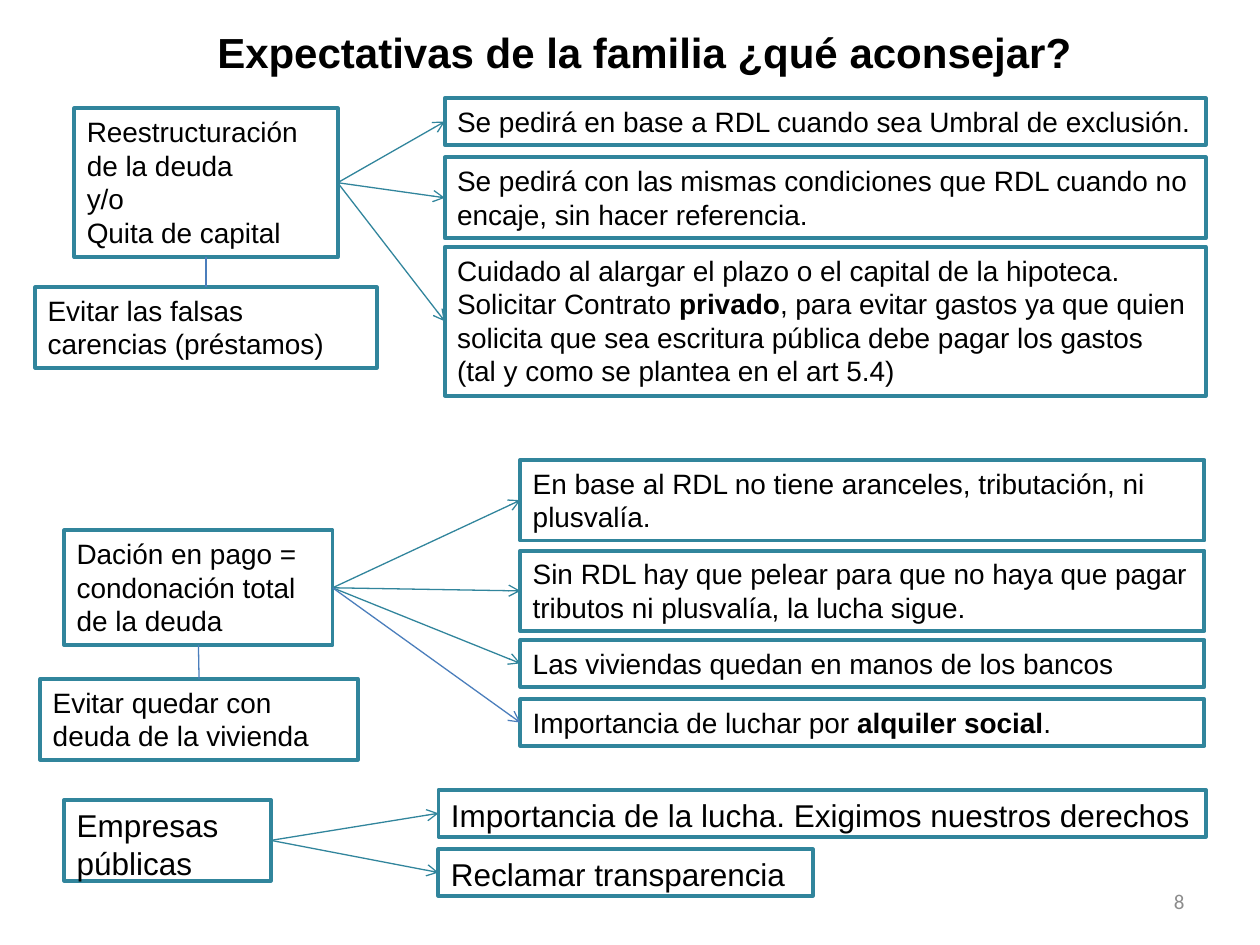
from lxml import etree
from pptx import Presentation
from pptx.dml.color import RGBColor
from pptx.enum.shapes import MSO_CONNECTOR as LINE, MSO_SHAPE as SHAPE
from pptx.enum.text import MSO_ANCHOR as ANCHOR, PP_ALIGN as ALIGN
from pptx.oxml.ns import qn
from pptx.util import Inches, Pt

COLORS = {"text": "000000", "teal": "31859C", "blue": "4B7EBC", "number": "8C8C8C"}
RIGHT, LEFT, BOTTOM, TOP = 3, 1, 2, 0

deck = Presentation()
deck.slide_width, deck.slide_height = Inches(10), Inches(7.5)
slide = deck.slides.add_slide(deck.slide_layouts[6])


def write(text, at, size=16, font="Arial", color="text", bold=False,
          align=ALIGN.LEFT, anchor=ANCHOR.TOP, boxed=True):
    """Add text; \\n parts paragraphs, \\v breaks a line, ** switches bold."""
    place = [Inches(length) for length in at]
    if boxed:
        holder = slide.shapes.add_shape(SHAPE.RECTANGLE, *place)
        holder.shadow.inherit = False
        holder.fill.background()
        holder.line.color.rgb = RGBColor.from_string(COLORS["teal"])
        holder.line.width = Pt(2.25)
    else:
        holder = slide.shapes.add_textbox(*place)
    frame = holder.text_frame
    frame.word_wrap = True
    frame.vertical_anchor = anchor
    for i, line in enumerate(text.split("\n")):
        paragraph = frame.paragraphs[0] if i == 0 else frame.add_paragraph()
        paragraph.alignment = align
        for j, part in enumerate(line.split("**")):
            for k, piece in enumerate(part.split("\v")):
                if k:
                    paragraph.add_line_break()
                run = paragraph.add_run()
                run.text = piece
                run.font.name = font
                run.font.size = Pt(size)
                run.font.bold = bold or j % 2 == 1
                run.font.color.rgb = RGBColor.from_string(COLORS[color])
    return holder


def link(start, start_side, end, end_side, color="teal", arrow=True):
    """Join the middles of two box sides."""
    joint = slide.shapes.add_connector(LINE.STRAIGHT, 0, 0, 0, 0)
    joint.begin_connect(start, start_side)
    joint.end_connect(end, end_side)
    joint.line.color.rgb = RGBColor.from_string(COLORS[color])
    joint.line.width = Pt(0.75)
    if arrow:
        etree.SubElement(joint.line._get_or_add_ln(), qn("a:tailEnd"), type="arrow")
    etree.SubElement(joint._element.spPr, qn("a:effectLst"))


# Title and slide number
write("Expectativas de la familia ¿qué aconsejar?", (1.45, 0.16, 7.33, 0.5),
      size=24, bold=True, align=ALIGN.CENTER, boxed=False)
write("8", (7.17, 6.95, 2.33, 0.4), size=12, font="Calibri", color="number",
      align=ALIGN.RIGHT, anchor=ANCHOR.MIDDLE, boxed=False)

# Each topic: text size, main box, warning below, and advice at the right
# as (text, top, width, height, arrow colour)
topics = [
    (16, ("Reestructuración de la deuda\ny/o\nQuita de capital", (0.59, 0.86, 2.09, 1.18)),
     ("Evitar las falsas carencias (préstamos)", (0.28, 2.28, 2.71, 0.64)),
     3.53, [
         ("Se pedirá en base a RDL cuando sea Umbral de exclusión.",
          0.78, 6.04, 0.37, "teal"),
         ("Se pedirá con las mismas condiciones que RDL cuando no encaje, "
          "sin hacer referencia.", 1.25, 6.04, 0.64, "teal"),
         ("Cuidado al alargar el plazo o el capital de la hipoteca.\n"
          "Solicitar Contrato **privado**, para evitar gastos ya que quien solicita "
          "que sea escritura pública debe pagar los gastos\v"
          "(tal y como se plantea en el art 5.4)", 1.96, 6.04, 1.18, "teal"),
     ]),
    (16, ("Dación en pago = condonación total de la deuda", (0.51, 4.21, 2.13, 0.91)),
     ("Evitar quedar con deuda de la vivienda", (0.32, 5.39, 2.52, 0.64)),
     4.13, [
         ("En base al RDL no tiene aranceles, tributación, ni plusvalía.",
          3.65, 5.43, 0.64, "teal"),
         ("Sin RDL hay que pelear para que no haya que pagar tributos ni plusvalía, "
          "la lucha sigue.", 4.37, 5.43, 0.64, "teal"),
         ("Las viviendas quedan en manos de los bancos", 5.08, 5.43, 0.37, "teal"),
         ("Importancia de luchar por **alquiler social**.", 5.55, 5.43, 0.37, "blue"),
     ]),
    (18, ("Empresas públicas", (0.51, 6.35, 1.64, 0.64)), None,
     3.48, [
         ("Importancia de la lucha. Exigimos nuestros derechos",
          6.27, 6.09, 0.37, "teal"),
         ("Reclamar transparencia", 6.74, 2.97, 0.37, "teal"),
     ]),
]

for size, (topic, topic_at), warning, advice_left, advice in topics:
    topic_box = write(topic, topic_at, size=size)
    if warning:
        warning_box = write(*warning, size=size)
        link(topic_box, BOTTOM, warning_box, TOP, color="blue", arrow=False)
    for tip, top, width, height, arrow_color in advice:
        tip_box = write(tip, (advice_left, top, width, height), size=size)
        link(topic_box, RIGHT, tip_box, LEFT, color=arrow_color)

deck.save("out.pptx")
